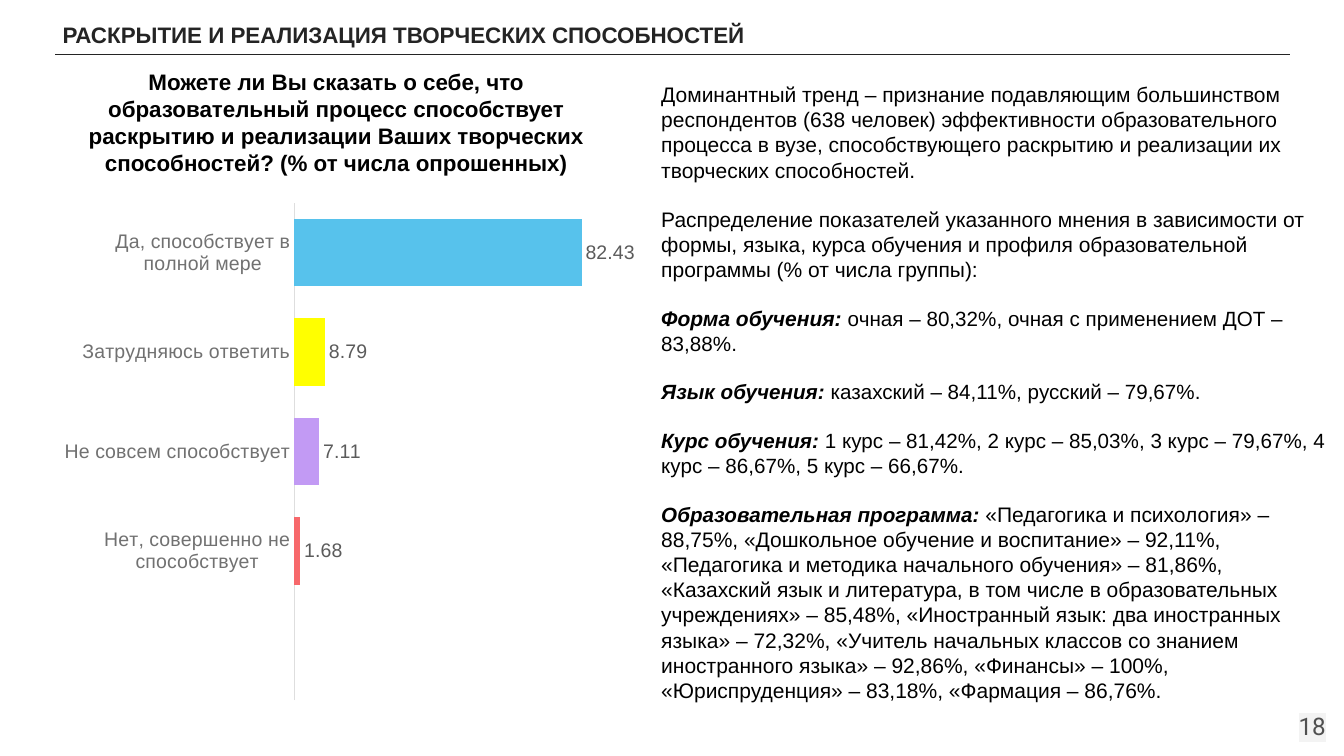
from lxml import etree
from pptx import Presentation
from pptx.chart.data import CategoryChartData
from pptx.dml.color import RGBColor
from pptx.enum.chart import XL_CHART_TYPE as ChartType
from pptx.enum.chart import XL_LABEL_POSITION as LabelPosition
from pptx.enum.chart import XL_TICK_MARK as TickMark
from pptx.enum.shapes import MSO_CONNECTOR as Connector
from pptx.enum.text import MSO_ANCHOR as Anchor
from pptx.enum.text import PP_ALIGN as Align
from pptx.oxml import parse_xml
from pptx.oxml.ns import nsdecls, qn
from pptx.util import Inches, Pt

COLORS = {
    "ink": "242424", "text": "000000", "page number": "505050", "highlight": "F3F3F3",
    "category": "717171", "label": "5B5B5B", "axis": "DEDEDE",
    "empty": "62CFB5", "red": "F7686B", "violet": "C29AF4", "yellow": "FFFF00", "blue": "57C2EC",
}


def style_font(font, size, color, bold=False, name="Arial"):
    font.name, font.size, font.bold = name, Pt(size), bold
    font.color.rgb = RGBColor.from_string(COLORS[color])


def prepare_frame(shape, left, top, width, height, inset):
    """Place a text shape and return its wrapped, top-anchored frame."""
    shape.left, shape.top = Inches(left), Inches(top)
    shape.width, shape.height = Inches(width), Inches(height)
    frame = shape.text_frame
    frame.word_wrap = True
    frame.vertical_anchor = Anchor.TOP
    frame.margin_left = frame.margin_right = Inches(inset)
    frame.margin_top = frame.margin_bottom = Inches(min(inset, 0.13))
    return frame


deck = Presentation()
deck.slide_width, deck.slide_height = Inches(13.33), Inches(7.5)
page = deck.slides.add_slide(deck.slide_layouts[5])
shapes = page.shapes

# Heading and rule
frame = prepare_frame(shapes.title, 0.52, 0.11, 7.56, 0.4, 0.1)
para = frame.paragraphs[0]
para.alignment = Align.LEFT
span = para.add_run()
span.text = "РАСКРЫТИЕ И РЕАЛИЗАЦИЯ ТВОРЧЕСКИХ СПОСОБНОСТЕЙ"
style_font(span.font, 16, "ink", bold=True)

rule = shapes.add_connector(Connector.STRAIGHT, Inches(0.55), Inches(0.54), Inches(12.79), Inches(0.54))
rule.line.color.rgb = RGBColor.from_string(COLORS["ink"])
rule.line.width = Pt(0.75)
etree.SubElement(rule._element.spPr, qn("a:effectLst"))

# Page number
frame = prepare_frame(shapes.add_textbox(0, 0, 0, 0), 12.48, 6.93, 0.8, 0.57, 0.13)
para = frame.paragraphs[0]
para.alignment = Align.RIGHT
span = para.add_run()
span.text = "18"
style_font(span.font, 17.3, "page number", name="Roboto")
highlight = parse_xml(
    f'<a:highlight {nsdecls("a")}><a:srgbClr val="{COLORS["highlight"]}"/></a:highlight>')
span._r.rPr.find(qn("a:solidFill")).addnext(highlight)

# Survey question
frame = prepare_frame(shapes.add_textbox(0, 0, 0, 0), 0.37, 0.63, 5.93, 1.18, 0.1)
frame.margin_top = frame.margin_bottom = Inches(0.05)
para = frame.paragraphs[0]
para.alignment = Align.CENTER
span = para.add_run()
span.text = ("Можете ли Вы сказать о себе, что образовательный процесс способствует раскрытию "
             "и реализации Ваших творческих способностей? (% от числа опрошенных)")
style_font(span.font, 16, "text", bold=True)

# Answers chart, from the bottom bar up
answers = [
    ("", None, "empty"),
    ("Нет, совершенно не способствует", 1.68, "red"),
    ("Не совсем способствует", 7.11, "violet"),
    ("Затрудняюсь ответить", 8.79, "yellow"),
    ("Да, способствует в полной мере", 82.43, "blue"),
]
data = CategoryChartData()
data.categories = [answer for answer, share, color in answers]
data.add_series("Series 1", [share for answer, share, color in answers])
chart = shapes.add_chart(ChartType.BAR_CLUSTERED, Inches(0.5), Inches(1.75),
                         Inches(5.8), Inches(5.25), data).chart
style_font(chart.font, 10, "ink")
chart.has_legend = False
chart.has_title = False

plot = chart.plots[0]
plot.gap_width = 48
plot.vary_by_categories = False
plot.has_data_labels = True
labels = plot.data_labels
labels.show_value = True
labels.position = LabelPosition.OUTSIDE_END
style_font(labels.font, 14, "label")
for index, (answer, share, color) in enumerate(answers):
    fill = plot.series[0].points[index].format.fill
    fill.solid()
    fill.fore_color.rgb = RGBColor.from_string(COLORS[color])

category_axis = chart.category_axis
category_axis.major_tick_mark = category_axis.minor_tick_mark = TickMark.NONE
category_axis.format.line.color.rgb = RGBColor.from_string(COLORS["axis"])
category_axis.format.line.width = Pt(0.75)
style_font(category_axis.tick_labels.font, 14, "category")
value_axis = chart.value_axis
value_axis.visible = False
value_axis.has_major_gridlines = False
value_axis.minimum_scale, value_axis.maximum_scale = 0, 90

plot_area = chart._chartSpace.chart.plotArea
for old_layout in plot_area.findall(qn("c:layout")):
    plot_area.remove(old_layout)
plot_area.insert(0, parse_xml(
    f'<c:layout {nsdecls("c")}><c:manualLayout><c:layoutTarget val="inner"/>'
    '<c:xMode val="edge"/><c:yMode val="edge"/><c:x val="0.42"/><c:y val="0.05"/>'
    '<c:w val="0.54"/><c:h val="0.94"/></c:manualLayout></c:layout>'))

# Findings: bold lead, text, text size
findings = [
    ("", "Доминантный тренд – признание подавляющим большинством респондентов (638 человек) "
     "эффективности образовательного процесса в вузе, способствующего раскрытию и реализации "
     "их творческих способностей.", 15),
    ("", "Распределение показателей указанного мнения в зависимости от формы, языка, курса "
     "обучения и профиля образовательной программы (% от числа группы):", 15),
    ("Форма обучения: ", "очная – 80,32%, очная с применением ДОТ – 83,88%.", 14.7),
    ("Язык обучения: ", "казахский – 84,11%, русский – 79,67%.", 14.7),
    ("Курс обучения: ", "1 курс – 81,42%, 2 курс – 85,03%, 3 курс – 79,67%, 4 курс – 86,67%, "
     "5 курс – 66,67%.", 14.7),
    ("Образовательная программа: ", "«Педагогика и психология» – 88,75%, «Дошкольное обучение "
     "и воспитание» – 92,11%, «Педагогика и методика начального обучения» – 81,86%, «Казахский "
     "язык и литература, в том числе в образовательных учреждениях» – 85,48%, «Иностранный "
     "язык: два иностранных языка» – 72,32%, «Учитель начальных классов со знанием "
     "иностранного языка» – 92,86%, «Финансы» – 100%, «Юриспруденция» – 83,18%, «Фармация – "
     "86,76%.", 15),
]
frame = prepare_frame(shapes.add_textbox(0, 0, 0, 0), 6.46, 0.76, 6.82, 6.62, 0.1)
frame.margin_top = frame.margin_bottom = Inches(0.05)
for index, (lead, text, size) in enumerate(findings):
    para = frame.add_paragraph() if index else frame.paragraphs[0]
    para.space_before = Pt(17 if index else 0)
    if lead:
        span = para.add_run()
        span.text = lead
        style_font(span.font, 14.7 if index > 2 else 15, "text", bold=True)
        span.font.italic = True
    span = para.add_run()
    span.text = text
    style_font(span.font, size, "text")

deck.save("out.pptx")
